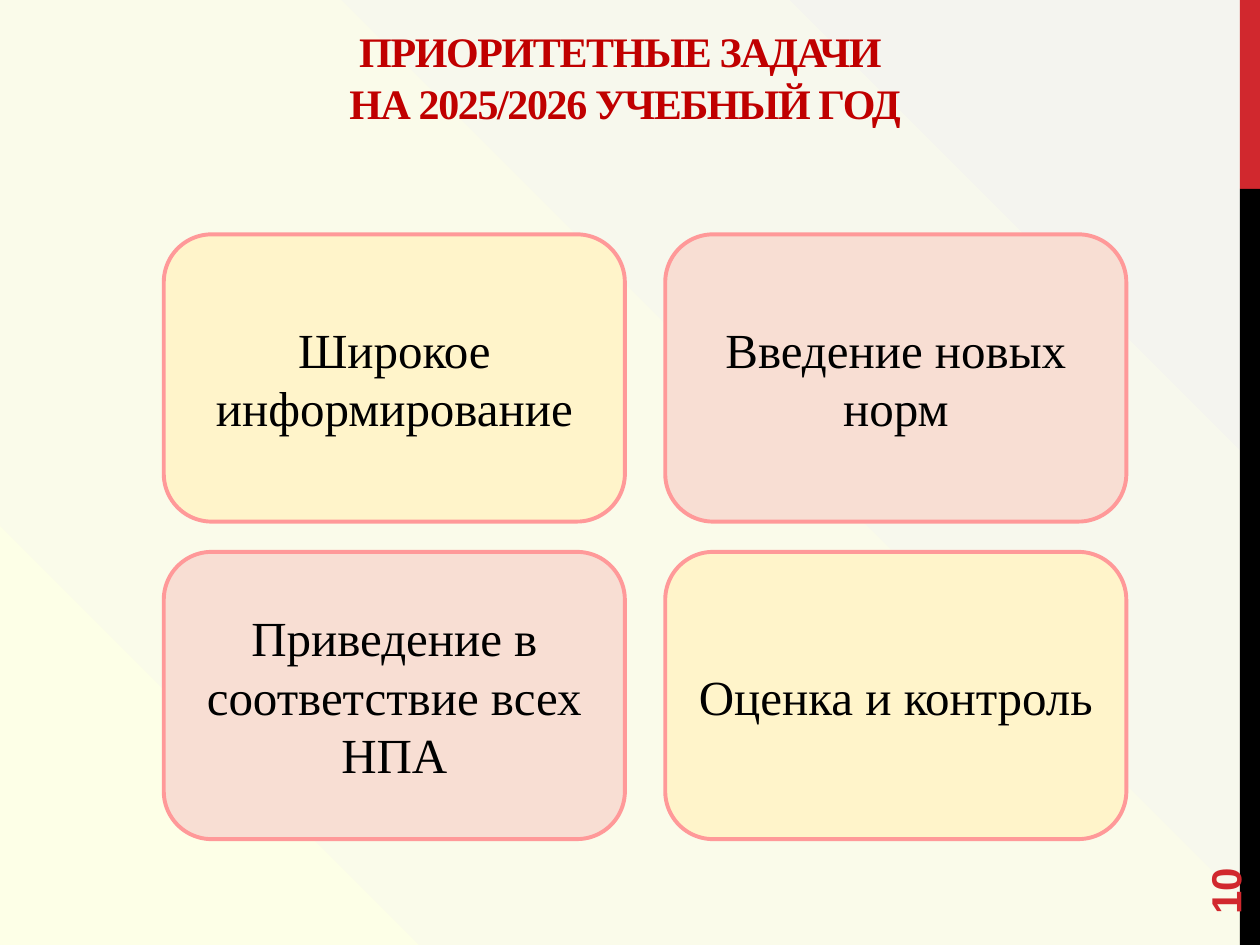
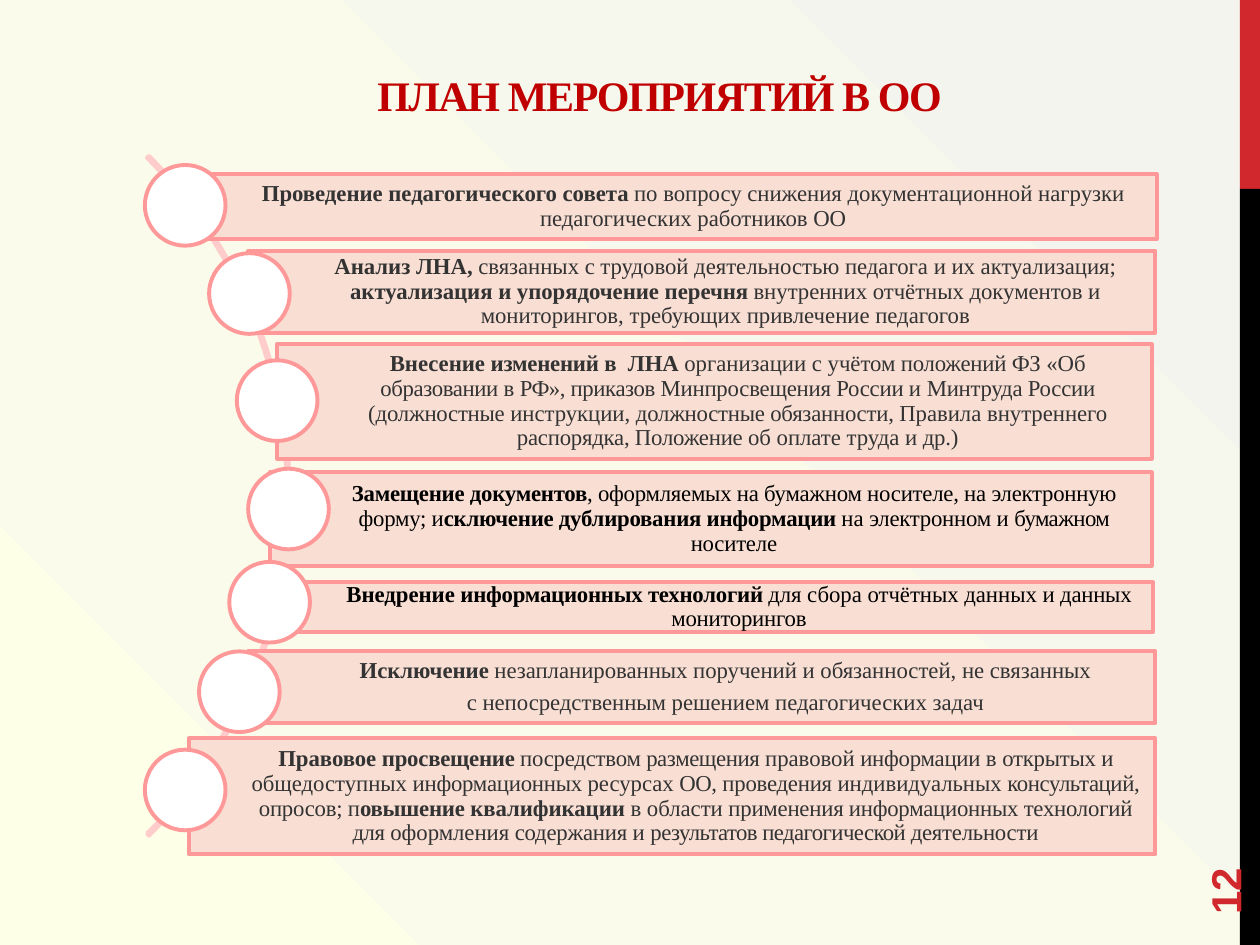
from pptx import Presentation
from pptx.dml.color import RGBColor
from pptx.enum.shapes import MSO_SHAPE as Kind
from pptx.enum.text import MSO_ANCHOR as Anchor, MSO_AUTO_SIZE as Fit, PP_ALIGN as Align
from pptx.oxml import parse_xml
from pptx.oxml.ns import nsdecls, qn
from pptx.util import Pt

PX = 9144  # 100 px to the inch
SERIF, SANS = "Times New Roman", "Arial"
RED, BLACK, TITLE, GREY = "D1282E", "000000", "C00000", "333333"
PINK, CREAM, WHITE = "F8DED3", "FFF4CA", "FFFFFF"
EDGE, ARC = "FF9999", "FFCCCC"
STOPS = (0, "FDFFE7"), (38, "FAFBEA"), (99, "F4F4EF")


def px(*nums):
    return [n * PX for n in nums]


def rgb(code):
    return RGBColor.from_string(code)


def b(text, spc=0):
    """Bold run; spc is letter spacing in hundredths of a point."""
    return text, True, spc


def n(text, spc=0):
    """Regular run."""
    return text, False, spc


def write(frame, paras, size, color, font=SERIF, align=Align.CENTER,
          anchor=Anchor.MIDDLE, inset=(10, 5, 10, 5), lead=None, before=0, after=0):
    frame.word_wrap = True
    frame.vertical_anchor = anchor
    (frame.margin_left, frame.margin_top,
     frame.margin_right, frame.margin_bottom) = px(*inset)
    for i, runs in enumerate(paras):
        para = frame.add_paragraph() if i else frame.paragraphs[0]
        para.alignment = align
        para.line_spacing = lead
        para.space_before, para.space_after = Pt(before), Pt(after)
        for text, bold, spc in runs:
            run = para.add_run()
            run.text = text
            run.font.name, run.font.size, run.font.bold = font, Pt(size), bold
            run.font.color.rgb = rgb(color)
            if spc:
                run.font._element.set("spc", str(spc))


def draw(slide, kind, box, fill=None, line=None):
    shape = slide.shapes.add_shape(kind, *px(*box))
    shape.shadow.inherit = False
    if fill:
        shape.fill.solid()
        shape.fill.fore_color.rgb = rgb(fill)
    else:
        shape.fill.background()
    if line:
        shape.line.color.rgb = rgb(line)
        shape.line.width = Pt(2.25)
    else:
        shape.line.fill.background()
    return shape


def paint(master):
    """Give the master its gradient background."""
    master.background.fill.solid()
    back = master.element.find(".//" + qn("p:bgPr"))
    stops = "".join(f'<a:gs pos="{pos * 1000}"><a:srgbClr val="{code}"/></a:gs>'
                    for pos, code in STOPS)
    back.replace(back[0], parse_xml(
        f'<a:gradFill {nsdecls("a")} rotWithShape="1"><a:gsLst>{stops}</a:gsLst>'
        '<a:path path="circle"><a:fillToRect t="100000" r="100000"/></a:path>'
        '</a:gradFill>'))


def start(deck, number, lines, box, top):
    """Add a slide with its side bands, page number and title."""
    slide = deck.slides.add_slide(deck.slide_layouts[5])
    draw(slide, Kind.RECTANGLE, (984, 0, 16, 150), RED)
    draw(slide, Kind.RECTANGLE, (984, 150, 16, 600), BLACK)
    page = slide.shapes.add_textbox(*px(900, 644, 144, 40))
    page.rotation = 270
    write(page.text_frame, [[b(number)]], 24, RED, SANS, Align.LEFT)
    title = slide.shapes.title
    title.left, title.top, title.width, title.height = px(*box)
    write(title.text_frame, [[b(line, -80)] for line in lines], 24, TITLE,
          anchor=Anchor.TOP, inset=(0, top, 0, 0), before=1)
    title.text_frame.auto_size = Fit.SHAPE_TO_FIT_TEXT
    return slide


def cards(slide, box, grid, gap):
    """Fill the box with cards in alternating colours."""
    left, top, width, height = box
    wide = (width - gap[0]) // 2
    high = (height - gap[1]) // 2
    for r, row in enumerate(grid):
        for c, text in enumerate(row):
            spot = left + c * (wide + gap[0]), top + r * (high + gap[1]), wide, high
            card = draw(slide, Kind.ROUNDED_RECTANGLE, spot,
                        PINK if (r + c) % 2 else CREAM, EDGE)
            write(card.text_frame, [[n(text)]], 28, BLACK)


def steps(slide, left, top, items):
    """Hang bars with round markers along an arc, relative to left and top."""
    arc = draw(slide, Kind.BLOCK_ARC, (left - 648, top - 119, 763, 763), line=ARC)
    for i, value in enumerate((189, 27, 0.003)):
        arc.adjustments[i] = value
    for (x, y, w, h), (dot_x, dot_y), color, paras in items:
        bar = draw(slide, Kind.RECTANGLE, (left + x, top + y, w, h), PINK, EDGE)
        write(bar.text_frame, paras, 13, color, inset=(41, 4, 4, 4),
              lead=0.9, after=4.5)
        draw(slide, Kind.OVAL, (left + dot_x, top + dot_y, 64, 64), WHITE, EDGE)


TASKS = [
    ["Широкое информирование", "Введение новых норм"],
    ["Приведение в соответствие всех НПА", "Оценка и контроль"],
]

# Bar box, marker corner, text colour, paragraphs
PLAN = [
    ((30, 7, 773, 52), (0, 0), GREY, [[
        b("Проведение педагогического совета "),
        n("по вопросу снижения документационной нагрузки педагогических работников ОО"),
    ]]),
    ((82, 68, 720, 65), (51, 70), GREY, [[
        b("Анализ ЛНА, "),
        n("связанных с трудовой деятельностью педагога и их актуализация; "),
        b("актуализация и упорядочение перечня "),
        n("внутренних отчётных документов и мониторингов, "
          "требующих привлечение педагогов"),
    ]]),
    ((105, 142, 694, 91), (73, 155), GREY, [[
        b("Внесение "), b("изменений ", -10), b("в  ЛНА "),
        n("организации с учётом "), n("положений ФЗ ", -10), n("«Об "),
        n("образовании ", -20), n("в "), n("РФ», ", -30), n("приказов ", -20),
        n("Минпросвещения России ", -10), n("и "), n("Минтруда России ", -10),
        n("("), n("должностные ", -10), n("инструкции, "),
        n("должностные обязанности, ", -10), n("Правила внутреннего "),
        n("распорядка, Положение ", -10), n("об оплате труда и "), n("др.)", -10),
    ]]),
    ((99, 244, 700, 74), (82, 241), BLACK, [[
        b("Замещение документов", -10),
        n(", оформляемых на бумажном носителе, на электронную форму; и", -10),
        b("сключение дублирования информации ", -10), n("на "),
        n("электронном ", -10), n("и "), n("бумажном ", -30), n("носителе", -10),
    ]]),
    ((106, 331, 694, 40), (67, 315), BLACK, [[
        b("Внедрение "), b("информационных технологий ", -10),
        n("для сбора отчётных данных и "), n("данных мониторингов", -10),
    ]]),
    ((82, 386, 720, 57), (43, 386), GREY, [
        [b("Исключение"),
         n(" незапланированных поручений и обязанностей, не связанных")],
        [n("с непосредственным решением педагогических задач")],
    ]),
    ((35, 455, 767, 92), (0, 464), GREY, [[
        b("Правовое "), b("просвещение ", -10), n("посредством ", -10),
        n("размещения ", -20), n("правовой "), n("информации ", -10), n("в "),
        n("открытых ", -10), n("и ", -50), n("общедоступных "),
        n("информационных ", -10), n("ресурсах "), n("ОО, ", -20),
        n("проведения ", -10), n("индивидуальных "), n("консультаций, ", -20),
        n("опросов; п", -10), b("овышение ", -10), b("квалификации "),
        n("в области "), n("применения информационных технологий ", -10),
        n("для ", -20), n("оформления "), n("содержания ", -10), n("и "),
        n("результатов педагогической ", -30), n("деятельности", -10),
    ]]),
]


def main():
    deck = Presentation()
    deck.slide_width, deck.slide_height = px(1000, 750)
    paint(deck.slide_master)
    tasks = start(deck, "10", ["ПРИОРИТЕТНЫЕ ЗАДАЧИ ", "НА 2025/2026 УЧЕБНЫЙ ГОД"],
                  (122, 19, 748, 84), 1)
    cards(tasks, (130, 186, 764, 480), TASKS, (32, 24))
    plan = start(deck, "12", ["ПЛАН МЕРОПРИЯТИЙ В ОО"], (153, 11, 741, 84), 44)
    steps(plan, 115, 131, PLAN)
    deck.save("out.pptx")


if __name__ == "__main__":
    main()
